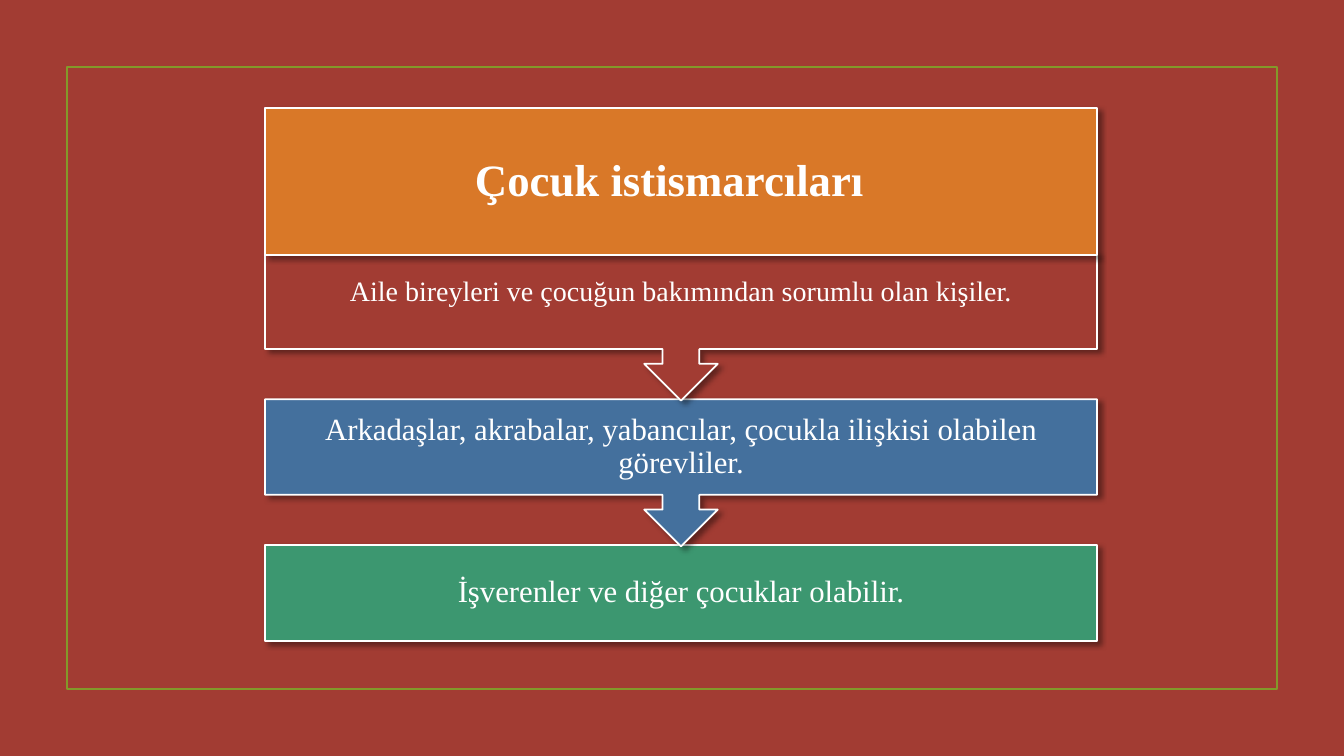
from dataclasses import dataclass

from lxml.etree import SubElement
from pptx import Presentation
from pptx.dml.color import RGBColor
from pptx.enum.shapes import MSO_SHAPE as Preset
from pptx.enum.text import MSO_ANCHOR as Anchor, MSO_AUTO_SIZE as AutoSize, PP_ALIGN as Align
from pptx.oxml.ns import qn
from pptx.util import Emu, Pt


@dataclass(frozen=True)
class Theme:
    background: str = "A23C33"
    frame: str = "83992A"
    white: str = "FFFFFF"
    shadow: str = "000000"
    font: str = "Times New Roman"
    title_size: int = 32
    small_size: int = 20
    body_size: int = 22
    line_width: float = 1.25


THEME = Theme()

HEADING = dict(text="Çocuk istismarcıları", fill="D97828", size=THEME.title_size,
               bold=True, spacing=0.9, insets=(25, 25, 48, 25))
STEPS = [
    dict(text="Aile bireyleri ve çocuğun bakımından sorumlu olan kişiler.",
         fill=THEME.background, size=THEME.small_size,
         bold=False, spacing=1.0, insets=(16, 16, 16, 38)),
    dict(text="Arkadaşlar, akrabalar, yabancılar, çocukla ilişkisi olabilen görevliler.",
         fill="44709D", size=THEME.body_size,
         bold=False, spacing=0.9, insets=(17, 17, 17, 17)),
    dict(text="İşverenler ve diğer çocuklar olabilir.",
         fill="3C9770", size=THEME.body_size,
         bold=False, spacing=0.9, insets=(17, 17, 17, 17)),
]

SLIDE_SIZE = (1344, 756)
FRAME = (67, 67, 1210, 622)
LEFT, WIDTH = 265, 832
FIRST_TOP, LAST_TOP = 108, 545
BOX_HEIGHT, CALLOUT_HEIGHT = 96, 147
PITCH = (LAST_TOP - FIRST_TOP) / len(STEPS)


def px(length):
    return Emu(round(length * 12192000 / 1344))


def color(value):
    return RGBColor.from_string(value)


def outline(shape, value):
    shape.line.color.rgb = color(value)
    shape.line.width = Pt(THEME.line_width)


def add_shadow(shape):
    shape.shadow.inherit = False
    effects = shape._element.spPr.find(qn("a:effectLst"))
    outer = SubElement(effects, qn("a:outerShdw"), blurRad=str(Pt(4)),
                       dist=str(Pt(3)), dir="2700000", rotWithShape="0")
    tint = SubElement(outer, qn("a:srgbClr"), val=THEME.shadow)
    SubElement(tint, qn("a:alpha"), val="40000")


def style_box(shape, item):
    shape.fill.solid()
    shape.fill.fore_color.rgb = color(item["fill"])
    outline(shape, THEME.white)
    add_shadow(shape)
    frame = shape.text_frame
    frame.word_wrap = True
    frame.auto_size = AutoSize.NONE
    frame.vertical_anchor = Anchor.MIDDLE
    (frame.margin_left, frame.margin_top,
     frame.margin_right, frame.margin_bottom) = map(px, item["insets"])
    frame.text = item["text"]
    paragraph = frame.paragraphs[0]
    paragraph.alignment = Align.CENTER
    paragraph.line_spacing = item["spacing"]
    paragraph.font.name = THEME.font
    paragraph.font.size = Pt(item["size"])
    paragraph.font.bold = item["bold"]
    paragraph.font.color.rgb = color(THEME.white)


def add_step(slide, index, item):
    is_last = index == len(STEPS)
    preset = Preset.RECTANGLE if is_last else Preset.DOWN_ARROW_CALLOUT
    height = BOX_HEIGHT if is_last else CALLOUT_HEIGHT
    shape = slide.shapes.add_shape(preset, px(LEFT), px(FIRST_TOP + index * PITCH),
                                   px(WIDTH), px(height))
    style_box(shape, item)


def place_heading(slide):
    title = slide.shapes.title
    title.left, title.top = px(LEFT), px(FIRST_TOP)
    title.width, title.height = px(WIDTH), px(CALLOUT_HEIGHT)
    geometry = SubElement(title._element.spPr, qn("a:prstGeom"), prst="downArrowCallout")
    SubElement(geometry, qn("a:avLst"))
    style_box(title, HEADING)
    slide.shapes._spTree.append(title._element)


def main():
    presentation = Presentation()
    presentation.slide_width, presentation.slide_height = map(px, SLIDE_SIZE)
    slide = presentation.slides.add_slide(presentation.slide_layouts[5])
    slide.background.fill.solid()
    slide.background.fill.fore_color.rgb = color(THEME.background)

    border = slide.shapes.add_shape(Preset.RECTANGLE, *map(px, FRAME))
    border.fill.background()
    border.shadow.inherit = False
    outline(border, THEME.frame)

    for index, item in reversed(list(enumerate(STEPS, start=1))):
        add_step(slide, index, item)
    place_heading(slide)
    presentation.save("out.pptx")


if __name__ == "__main__":
    main()
